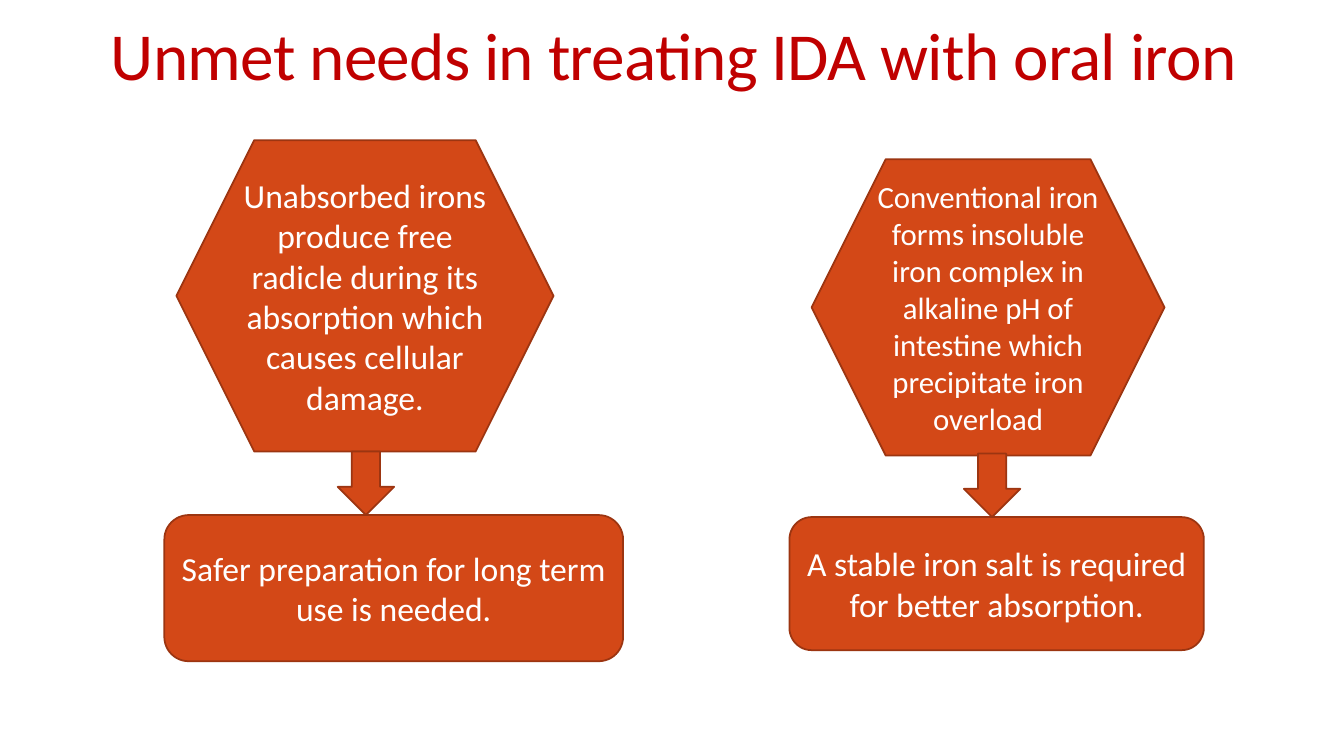
from pptx import Presentation
from pptx.dml.color import RGBColor
from pptx.enum.shapes import MSO_SHAPE as Preset
from pptx.enum.text import MSO_ANCHOR as Anchor, MSO_AUTO_SIZE as AutoSize, PP_ALIGN as Align
from pptx.util import Inches, Pt

ORANGE = RGBColor(0xD3, 0x48, 0x17)
BROWN = RGBColor(0x9C, 0x35, 0x11)
RED = RGBColor(0xC0, 0x00, 0x00)
WHITE = RGBColor(0xFF, 0xFF, 0xFF)
ARROW_WIDTH, ARROW_HEIGHT = 0.56, 0.63


class NeedsSlide:
    """Holds the slide and the look its elements share."""

    font_name = "Calibri"

    def __init__(self, deck):
        self.slide = deck.slides.add_slide(deck.slide_layouts[5])

    def set_text(self, frame, text, size, color, align, anchor):
        frame.text = text
        frame.word_wrap = True
        frame.auto_size = AutoSize.NONE
        frame.vertical_anchor = anchor
        paragraph = frame.paragraphs[0]
        paragraph.alignment = align
        run = paragraph.runs[0]
        run.font.name = self.font_name
        run.font.size = Pt(size)
        run.font.color.rgb = color
        return paragraph

    def title(self, text, box):
        heading = self.slide.shapes.title
        heading.left, heading.top, heading.width, heading.height = map(Inches, box)
        paragraph = self.set_text(heading.text_frame, text, 48, RED, Align.LEFT, Anchor.BOTTOM)
        paragraph.line_spacing = 0.85
        # Slightly tightened letters, in hundredths of a point
        paragraph.runs[0].font._element.set("spc", "-50")

    def block(self, preset, box, text=None, size=24):
        block = self.slide.shapes.add_shape(preset, *map(Inches, box))
        block.shadow.inherit = False
        block.fill.solid()
        block.fill.fore_color.rgb = ORANGE
        block.line.color.rgb = BROWN
        block.line.width = Pt(1.25)
        if text:
            self.set_text(block.text_frame, text, size, WHITE, Align.CENTER, Anchor.MIDDLE)

    def need(self, problem, problem_box, size, arrow_left, answer, answer_box):
        """A problem with an arrow down to the answer it calls for."""
        self.block(Preset.HEXAGON, problem_box, problem, size)
        arrow_top = answer_box[1] - ARROW_HEIGHT
        self.block(Preset.DOWN_ARROW, (arrow_left, arrow_top, ARROW_WIDTH, ARROW_HEIGHT))
        self.block(Preset.ROUNDED_RECTANGLE, answer_box, answer)


def main():
    deck = Presentation()
    deck.slide_width, deck.slide_height = Inches(13.33), Inches(7.5)
    needs = NeedsSlide(deck)

    # Title
    needs.title("Unmet needs in treating IDA with oral iron", (1, -0.01, 12.05, 0.99))

    # Left: safety
    needs.need(
        "Unabsorbed irons produce free radicle during its absorption "
        "which causes cellular damage.",
        (1.75, 1.39, 3.74, 3.09), 24, 3.35,
        "Safer preparation for long term use is needed.",
        (1.63, 5.11, 4.55, 1.45),
    )

    # Right: absorption
    needs.need(
        "Conventional iron forms insoluble iron complex in alkaline pH "
        "of intestine which precipitate iron overload",
        (8.05, 1.58, 3.5, 2.94), 22, 9.56,
        "A stable iron salt is required for better absorption.",
        (7.83, 5.13, 4.11, 1.32),
    )

    deck.save("out.pptx")


if __name__ == "__main__":
    main()
